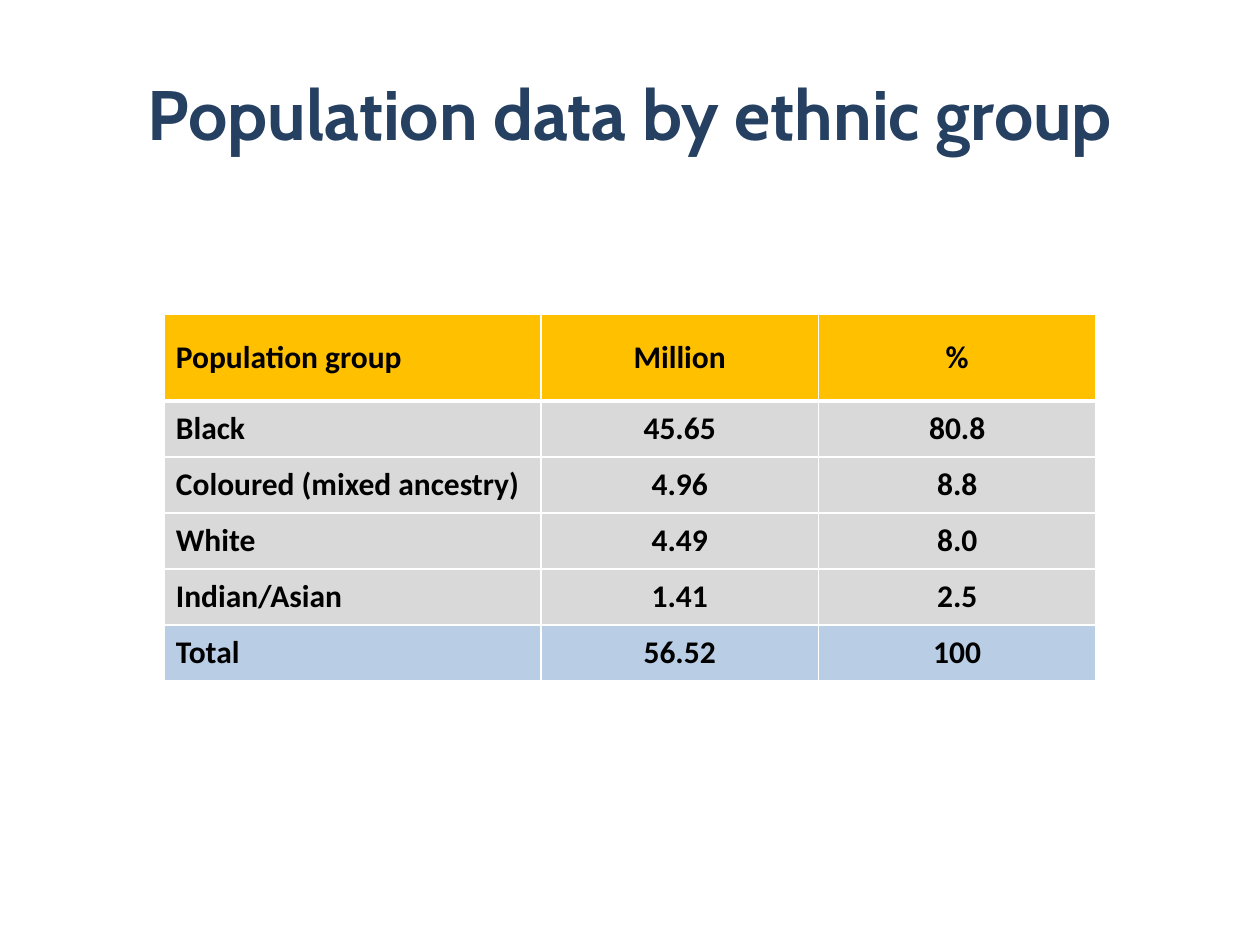
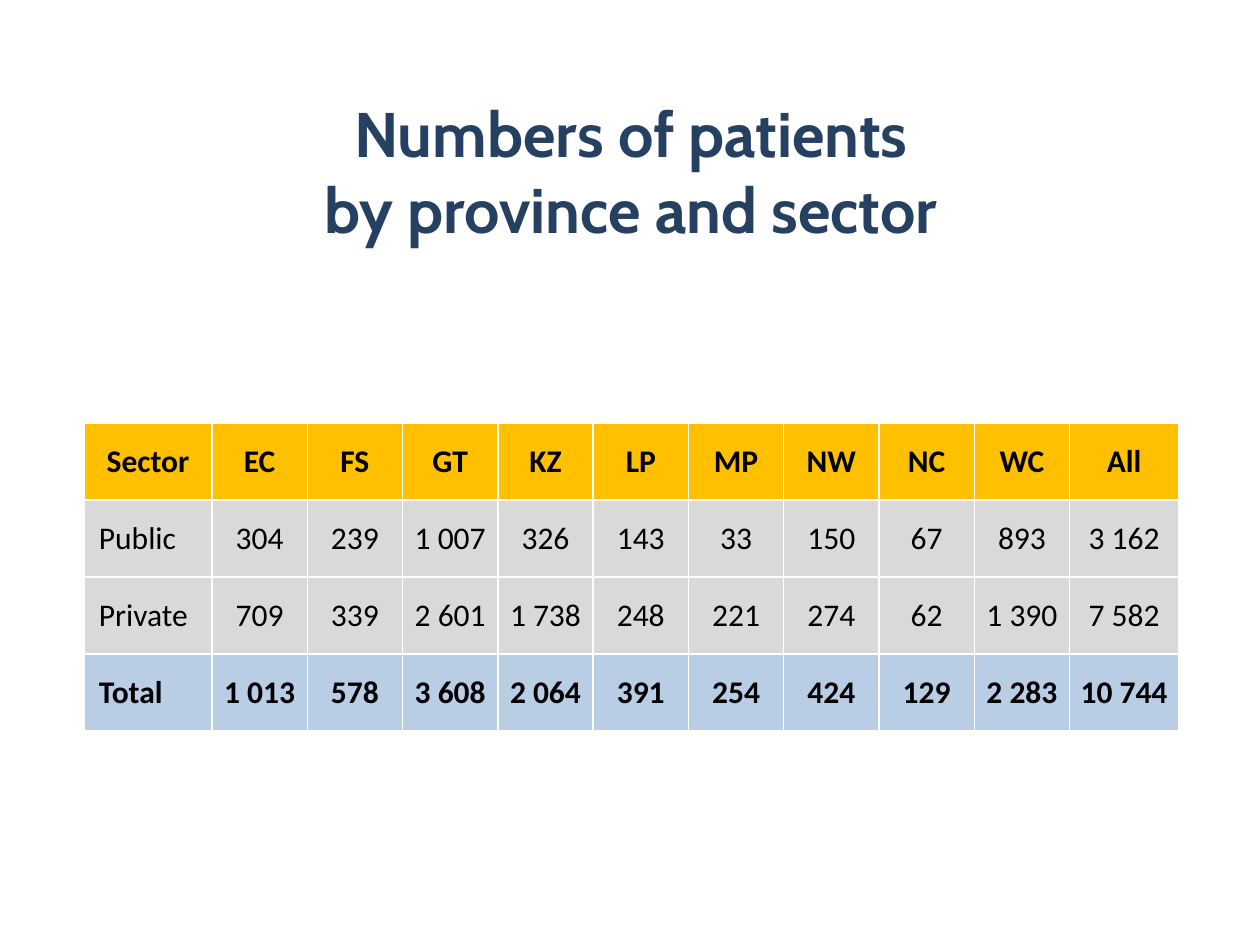
from dataclasses import dataclass

from lxml.etree import SubElement
from pptx import Presentation
from pptx.dml.color import RGBColor
from pptx.enum.text import MSO_ANCHOR as Anchor, PP_ALIGN as Align
from pptx.oxml.ns import qn
from pptx.util import Emu, Pt

# Scale and shared style
EMU_PER_PX = 914400 / 126
SLIDE_WIDTH, SLIDE_HEIGHT = 1260, 945

NAVY = RGBColor(0x25, 0x40, 0x61)
GOLD = RGBColor(0xFF, 0xC0, 0x00)
GREY = RGBColor(0xD9, 0xD9, 0xD9)
BLUE = RGBColor(0xB9, 0xCD, 0xE5)
BLACK = RGBColor(0x00, 0x00, 0x00)
WHITE = RGBColor(0xFF, 0xFF, 0xFF)

TITLE_FONT, TABLE_FONT = "Cabin", "Calibri"
TABLE_SIZE = 18


@dataclass(frozen=True)
class Title:
    text: str
    left: int
    top: int
    width: int
    height: int
    size: int


@dataclass(frozen=True)
class DataTable:
    rows: list[list[str]]
    left: int
    top: int
    width: int
    first_column: int
    header_height: int
    row_height: int
    label_inset: int
    value_inset: int
    last_column: int | None = None  # None: as wide as the inner columns
    header_rule: int = 1
    label_header_align: Align = Align.LEFT
    body_bold: bool = True


def px(length: float) -> Emu:
    return Emu(round(length * EMU_PER_PX))


def write(frame, text: str, *, font: str, size: int, color: RGBColor,
          bold: bool = True, align: Align = Align.CENTER) -> None:
    """Fill a text frame with one paragraph; newlines become line breaks."""
    para = frame.paragraphs[0]
    para.alignment = align
    for index, line in enumerate(text.split("\n")):
        if index:
            para.add_line_break()
        span = para.add_run()
        span.text = line
        span.font.name = font
        span.font.size = Pt(size)
        span.font.bold = bold
        span.font.color.rgb = color


def add_title(page, title: Title) -> None:
    box = page.shapes.add_textbox(px(title.left), px(title.top),
                                  px(title.width), px(title.height))
    frame = box.text_frame
    frame.word_wrap = True
    frame.vertical_anchor = Anchor.MIDDLE
    write(frame, title.text, font=TITLE_FONT, size=title.size, color=NAVY)


def set_borders(cell, *, top: int = 1, bottom: int = 1) -> None:
    """Draw white cell borders; the schema wants them ahead of the fill."""
    properties = cell._tc.get_or_add_tcPr()
    widths = {"a:lnL": 1, "a:lnR": 1, "a:lnT": top, "a:lnB": bottom}
    for index, (tag, width) in enumerate(widths.items()):
        line = SubElement(properties, qn(tag), w=str(Pt(width)))
        fill = SubElement(line, qn("a:solidFill"))
        SubElement(fill, qn("a:srgbClr"), val=str(WHITE))
        properties.insert(index, line)


def column_widths(data: DataTable) -> list[float]:
    """Share the width left by the fixed outer columns equally."""
    inner_count = len(data.rows[0]) - 1
    if data.last_column is None:
        share = (data.width - data.first_column) / inner_count
        return [data.first_column] + [share] * inner_count
    inner_count -= 1
    share = (data.width - data.first_column - data.last_column) / inner_count
    return [data.first_column] + [share] * inner_count + [data.last_column]


def add_data_table(page, data: DataTable) -> None:
    last_row = len(data.rows) - 1
    height = data.header_height + data.row_height * last_row
    table = page.shapes.add_table(
        len(data.rows), len(data.rows[0]), px(data.left), px(data.top),
        px(data.width), px(height)).table
    table.first_row = table.horz_banding = False

    for column, width in zip(table.columns, column_widths(data)):
        column.width = px(width)

    for r, values in enumerate(data.rows):
        is_header, is_total = r == 0, r == last_row
        table.rows[r].height = px(
            data.header_height if is_header else data.row_height)
        for c, value in enumerate(values):
            cell = table.cell(r, c)
            cell.vertical_anchor = Anchor.MIDDLE
            is_label = c == 0
            align = Align.LEFT if is_label else Align.CENTER
            if is_label and is_header:
                align = data.label_header_align
            indented = is_label and align == Align.LEFT
            cell.margin_left = px(
                data.label_inset if indented else data.value_inset)
            cell.margin_right = px(data.value_inset)
            cell.margin_top = cell.margin_bottom = px(1)
            cell.fill.solid()
            cell.fill.fore_color.rgb = (
                GOLD if is_header else BLUE if is_total else GREY)
            set_borders(cell, top=data.header_rule if r == 1 else 1,
                        bottom=data.header_rule if is_header else 1)
            write(cell.text_frame, value, font=TABLE_FONT, size=TABLE_SIZE,
                  color=BLACK, align=align,
                  bold=is_header or is_total or data.body_bold)


# Slide contents
POPULATION = DataTable(
    rows=[
        ["Population group", "Million", "%"],
        ["Black", "45.65", "80.8"],
        ["Coloured (mixed ancestry)", "4.96", "8.8"],
        ["White", "4.49", "8.0"],
        ["Indian/Asian", "1.41", "2.5"],
        ["Total", "56.52", "100"],
    ],
    left=164, top=314, width=932, first_column=377,
    header_height=87, row_height=56, label_inset=12, value_inset=1,
    header_rule=3,
)

PATIENTS = DataTable(
    rows=[
        ["Sector", "EC", "FS", "GT", "KZ", "LP", "MP", "NW", "NC", "WC", "All"],
        ["Public", "304", "239", "1 007", "326", "143", "33", "150", "67",
         "893", "3 162"],
        ["Private", "709", "339", "2 601", "1 738", "248", "221", "274", "62",
         "1 390", "7 582"],
        ["Total", "1 013", "578", "3 608", "2 064", "391", "254", "424", "129",
         "2 283", "10 744"],
    ],
    left=84, top=423, width=1095, first_column=128, last_column=109,
    header_height=77, row_height=77, label_inset=15, value_inset=1,
    label_header_align=Align.CENTER, body_bold=False,
)

PAGES = [
    (Title("Population data by ethnic group", 15, 48, 1230, 129, 40),
     POPULATION),
    (Title("Numbers of patients\nby province and sector",
           64, 106, 1134, 129, 36), PATIENTS),
]


def main() -> None:
    deck = Presentation()
    deck.slide_width, deck.slide_height = px(SLIDE_WIDTH), px(SLIDE_HEIGHT)
    blank = deck.slide_layouts[6]
    for title, data in PAGES:
        page = deck.slides.add_slide(blank)
        add_title(page, title)
        add_data_table(page, data)
    deck.save("out.pptx")


if __name__ == "__main__":
    main()
